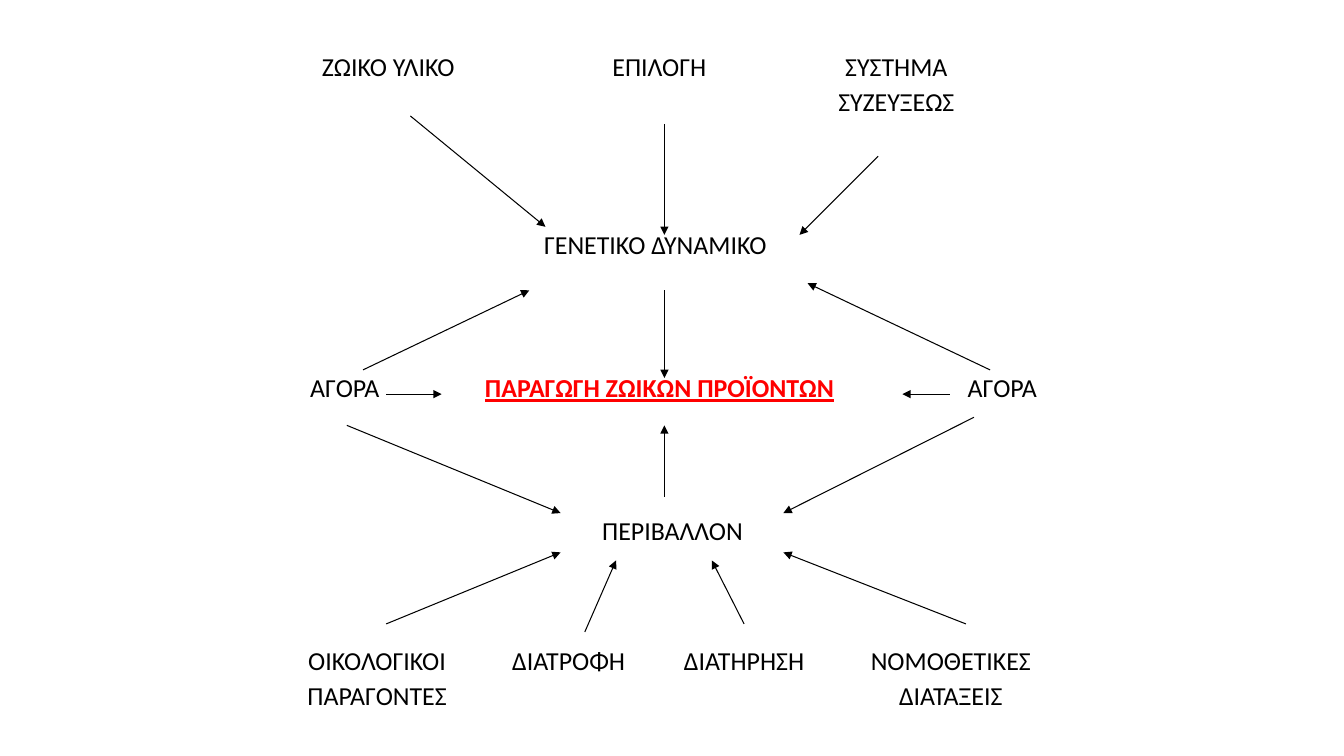
"""Draw the factors that shape livestock production as a slide of labels and arrows."""
from dataclasses import dataclass

from lxml import etree
from pptx import Presentation
from pptx.dml.color import RGBColor
from pptx.enum.shapes import MSO_CONNECTOR
from pptx.enum.text import MSO_ANCHOR, PP_ALIGN
from pptx.oxml.ns import qn
from pptx.util import Inches, Pt

STRAIGHT = MSO_CONNECTOR.STRAIGHT
TOP = MSO_ANCHOR.TOP
CENTER = PP_ALIGN.CENTER


@dataclass(frozen=True)
class Theme:
    """Hold the colours, type and line sizes."""
    font: str = "Calibri"
    size: float = 18.5
    gap: float = 3
    ink: RGBColor = RGBColor(0, 0, 0)
    accent: RGBColor = RGBColor(255, 0, 0)
    stroke: float = 0.75
    row: float = 0.32


class Chart:
    """Place labels and arrows on one slide."""

    def __init__(self, slide, theme):
        """Keep the slide and its style."""
        self.slide = slide
        self.theme = theme

    def label(self, text, x, y, width=2, key=False):
        """Centre text on x, with its first line centred on y."""
        theme = self.theme
        lines = text.split("\n")
        box = self.slide.shapes.add_textbox(
            Inches(x - width / 2), Inches(y - theme.row / 2),
            Inches(width), Inches(theme.row * len(lines)))
        frame = box.text_frame
        frame.word_wrap = True
        frame.vertical_anchor = TOP
        frame.margin_left = frame.margin_right = 0
        frame.margin_top = frame.margin_bottom = 0
        frame.text = text
        for i, para in enumerate(frame.paragraphs):
            para.alignment = CENTER
            para.space_before = Pt(theme.gap if i else 0)
            font = para.font
            font.name = theme.font
            font.size = Pt(theme.size)
            font.bold = font.underline = key
            font.color.rgb = theme.accent if key else theme.ink

    def arrow(self, start, end):
        """Draw a line with a triangle at its end."""
        line = self.slide.shapes.add_connector(
            STRAIGHT, *(Inches(n) for n in (*start, *end)))
        line.line.color.rgb = self.theme.ink
        line.line.width = Pt(self.theme.stroke)
        stroke = line.line._get_or_add_ln()
        etree.SubElement(stroke, qn("a:tailEnd"), type="triangle")
        etree.SubElement(line._element.spPr, qn("a:effectLst"))


MID = 6.59

LABELS = [
    ("ΖΩΙΚΟ ΥΛΙΚΟ", 3.85, 0.66),
    ("ΕΠΙΛΟΓΗ", 6.54, 0.66),
    ("ΣΥΣΤΗΜΑ\nΣΥΖΕΥΞΕΩΣ", 8.89, 0.66),
    ("ΓΕΝΕΤΙΚΟ ΔΥΝΑΜΙΚΟ", 6.5, 2.43, 3),
    ("ΑΓΟΡΑ", 3.42, 3.85, 1),
    ("ΠΑΡΑΓΩΓΗ ΖΩΙΚΩΝ ΠΡΟΪΟΝΤΩΝ", 6.54, 3.85, 4, True),
    ("ΑΓΟΡΑ", 9.94, 3.85, 1),
    ("ΠΕΡΙΒΑΛΛΟΝ", 6.67, 5.27),
    ("ΟΙΚΟΛΟΓΙΚΟΙ\nΠΑΡΑΓΟΝΤΕΣ", 3.74, 6.55),
    ("ΔΙΑΤΡΟΦΗ", 5.64, 6.55, 1.5),
    ("ΔΙΑΤΗΡΗΣΗ", 7.38, 6.55, 1.5),
    ("ΝΟΜΟΘΕΤΙΚΕΣ\nΔΙΑΤΑΞΕΙΣ", 9.43, 6.55),
]

ARROWS = [
    ((4.07, 1.15), (5.41, 2.25)),
    ((MID, 1.23), (MID, 2.33)),
    ((8.71, 1.55), (7.93, 2.33)),
    ((MID, 2.88), (MID, 3.75)),
    ((3.83, 3.91), (4.38, 3.91)),
    ((9.42, 3.91), (8.95, 3.91)),
    ((3.6, 3.67), (5.25, 2.88)),
    ((9.82, 3.67), (8.01, 2.81)),
    ((MID, 4.93), (MID, 4.22)),
    ((3.83, 6.19), (5.56, 5.48)),
    ((5.8, 6.27), (6.11, 5.56)),
    ((7.38, 6.19), (7.06, 5.56)),
    ((9.58, 6.19), (7.77, 5.48)),
    ((3.44, 4.22), (5.56, 5.09)),
    ((9.66, 4.14), (7.77, 5.09)),
]


def main():
    """Build and save the slide."""
    deck = Presentation()
    deck.slide_width = Inches(13.33)
    deck.slide_height = Inches(7.5)
    chart = Chart(deck.slides.add_slide(deck.slide_layouts[6]), Theme())
    for item in LABELS:
        chart.label(*item)
    for start, end in ARROWS:
        chart.arrow(start, end)
    deck.save("out.pptx")


if __name__ == "__main__":
    main()
